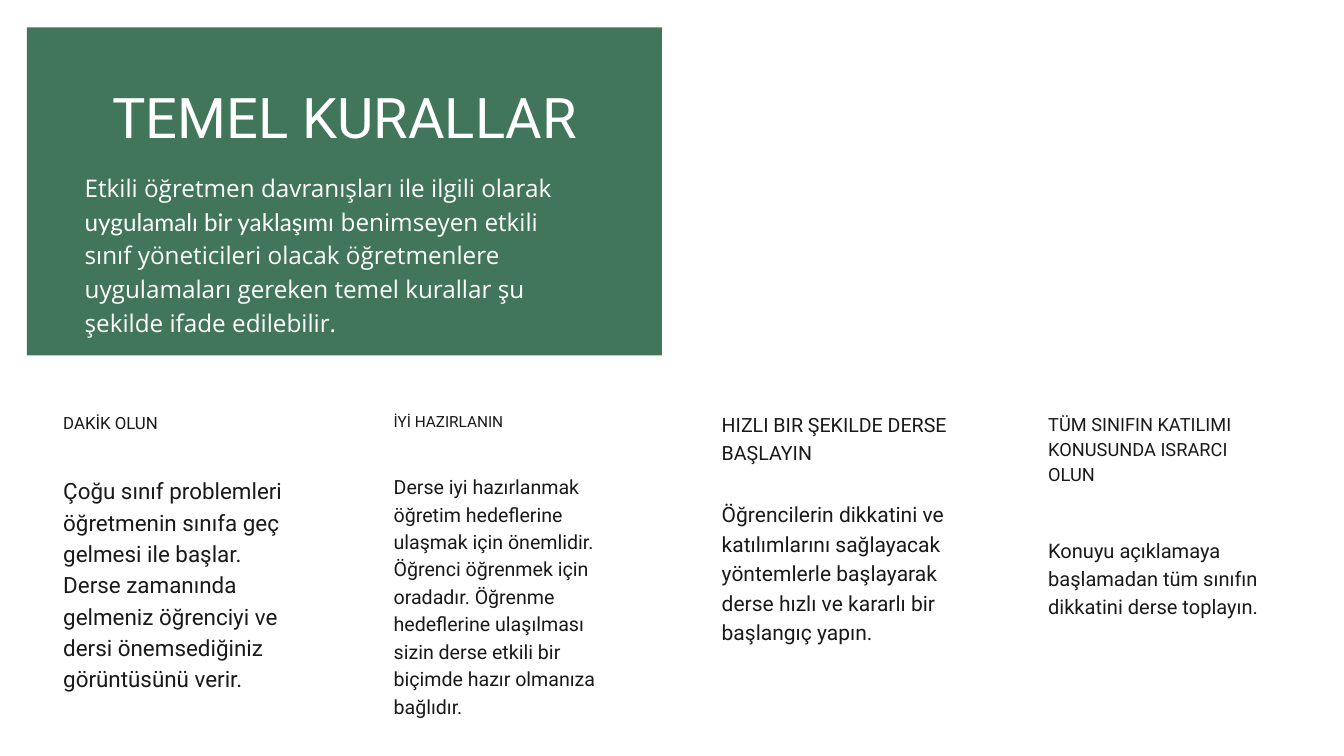
from dataclasses import dataclass

from pptx import Presentation
from pptx.dml.color import RGBColor
from pptx.enum.shapes import MSO_SHAPE
from pptx.enum.text import MSO_AUTO_SIZE, PP_ALIGN
from pptx.slide import Slide
from pptx.text.text import _Paragraph as Paragraph
from pptx.util import Cm, Pt


@dataclass(frozen=True)
class Theme:
    green: RGBColor = RGBColor(0x41, 0x76, 0x5A)
    white: RGBColor = RGBColor(0xFF, 0xFF, 0xFF)
    ink: RGBColor = RGBColor(0x19, 0x19, 0x19)
    heading_font: str = "Roboto"
    intro_font: str = "Open Sans"
    accent_font: str = "Lato"
    title_size: float = 60
    intro_size: float = 26
    title_leading: float = 1.2
    leading: float = 1.4


@dataclass(frozen=True)
class Area:
    """Left, top, width and height in centimetres."""
    left: float
    top: float
    width: float
    height: float

    def lengths(self) -> tuple[Cm, Cm, Cm, Cm]:
        return Cm(self.left), Cm(self.top), Cm(self.width), Cm(self.height)


@dataclass(frozen=True)
class Rule:
    heading: str
    heading_area: Area
    heading_size: float
    body: str
    body_area: Area
    body_size: float


THEME = Theme()

RULES = [
    Rule("DAKİK OLUN", Area(2.39, 15.49, 8.92, 0.81), 18,
         "Çoğu sınıf problemleri öğretmenin sınıfa geç gelmesi ile başlar. "
         "Derse zamanında gelmeniz öğrenciyi ve dersi önemsediğiniz "
         "görüntüsünü verir.",
         Area(2.39, 17.88, 8.92, 8.05), 24),
    Rule("İYİ HAZIRLANIN", Area(14.88, 15.47, 8.69, 0.76), 16.5,
         "Derse iyi hazırlanmak öğretim hedeflerine ulaşmak için önemlidir. "
         "Öğrenci öğrenmek için oradadır. Öğrenme hedeflerine ulaşılması "
         "sizin derse etkili bir biçimde hazır olmanıza bağlıdır.",
         Area(14.88, 17.81, 8.69, 10.26), 21),
    Rule("HIZLI BIR ŞEKILDE DERSE BAŞLAYIN", Area(27.28, 15.47, 8.61, 2.01), 21,
         "Öğrencilerin dikkatini ve katılımlarını sağlayacak yöntemlerle "
         "başlayarak derse hızlı ve kararlı bir başlangıç yapın.",
         Area(27.28, 18.82, 8.61, 8.61), 22.5),
    Rule("TÜM SINIFIN KATILIMI KONUSUNDA ISRARCI OLUN",
         Area(39.62, 15.47, 8.33, 2.82), 19.5,
         "Konuyu açıklamaya başlamadan tüm sınıfın dikkatini derse toplayın.",
         Area(39.62, 20.19, 8.33, 5.23), 21.5),
]


def add_text(page: Slide, area: Area, text: str, size: float, color: RGBColor,
             leading: float = THEME.leading,
             font: str = THEME.heading_font) -> Paragraph:
    box = page.shapes.add_textbox(*area.lengths())
    frame = box.text_frame
    frame.word_wrap = True
    frame.auto_size = MSO_AUTO_SIZE.SHAPE_TO_FIT_TEXT
    frame.margin_left = frame.margin_right = Cm(0)
    frame.margin_top = frame.margin_bottom = Cm(0)
    para = frame.paragraphs[0]
    para.line_spacing = Pt(round(size * leading, 1))
    para.font.size = Pt(size)
    para.font.name = font
    para.font.color.rgb = color
    if text:
        para.add_run().text = text
    return para


def add_banner(page: Slide) -> None:
    panel = page.shapes.add_shape(
        MSO_SHAPE.RECTANGLE, *Area(1.02, 1.04, 24, 12.4).lengths())
    panel.shadow.inherit = False
    panel.fill.solid()
    panel.fill.fore_color.rgb = THEME.green
    panel.line.fill.background()

    # Introduction, with one phrase in the accent font
    intro = add_text(page, Area(3.2, 6.35, 18.92, 6.27), "",
                     THEME.intro_size, THEME.white, font=THEME.intro_font)
    for text, font in (
        ("Etkili öğretmen davranışları ile ilgili olarak ", THEME.intro_font),
        ("uygulamalı bir yaklaşımı", THEME.accent_font),
        (" benimseyen etkili sınıf yöneticileri olacak öğretmenlere "
         "uygulamaları gereken temel kurallar şu şekilde ifade edilebilir.",
         THEME.intro_font),
    ):
        span = intro.add_run()
        span.text = text
        span.font.name = font

    title = add_text(page, Area(3.2, 3.12, 19.66, 2.54), "TEMEL KURALLAR",
                     THEME.title_size, THEME.white, THEME.title_leading)
    title.alignment = PP_ALIGN.CENTER


def add_rule(page: Slide, rule: Rule) -> None:
    add_text(page, rule.body_area, rule.body, rule.body_size, THEME.ink)
    add_text(page, rule.heading_area, rule.heading, rule.heading_size, THEME.ink)


def main() -> None:
    deck = Presentation()
    deck.slide_width, deck.slide_height = Cm(50.8), Cm(28.58)
    page = deck.slides.add_slide(deck.slide_layouts[6])
    page.background.fill.solid()
    page.background.fill.fore_color.rgb = THEME.white

    # Green banner, then the four rules
    add_banner(page)
    for rule in RULES:
        add_rule(page, rule)

    deck.save("out.pptx")


if __name__ == "__main__":
    main()
